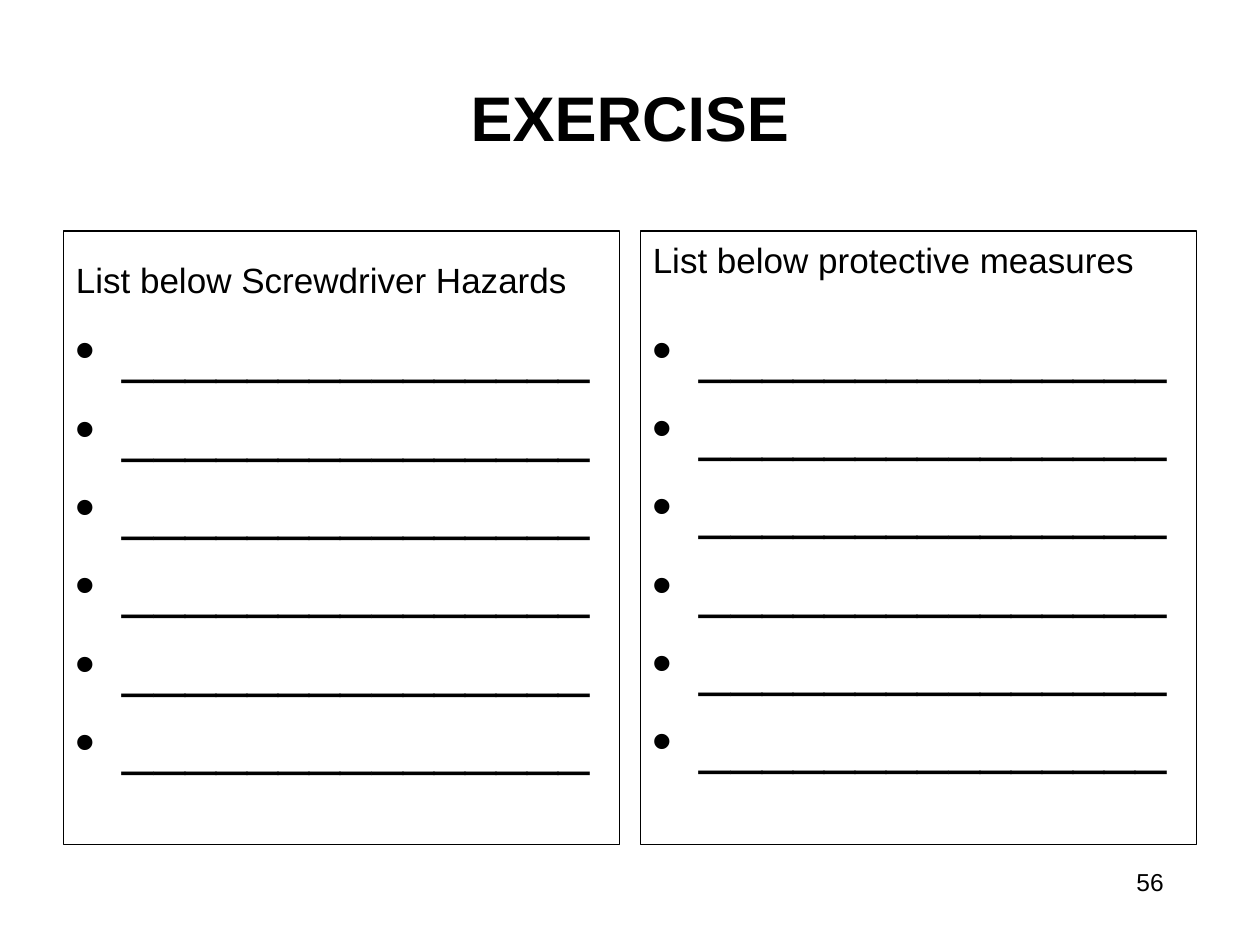
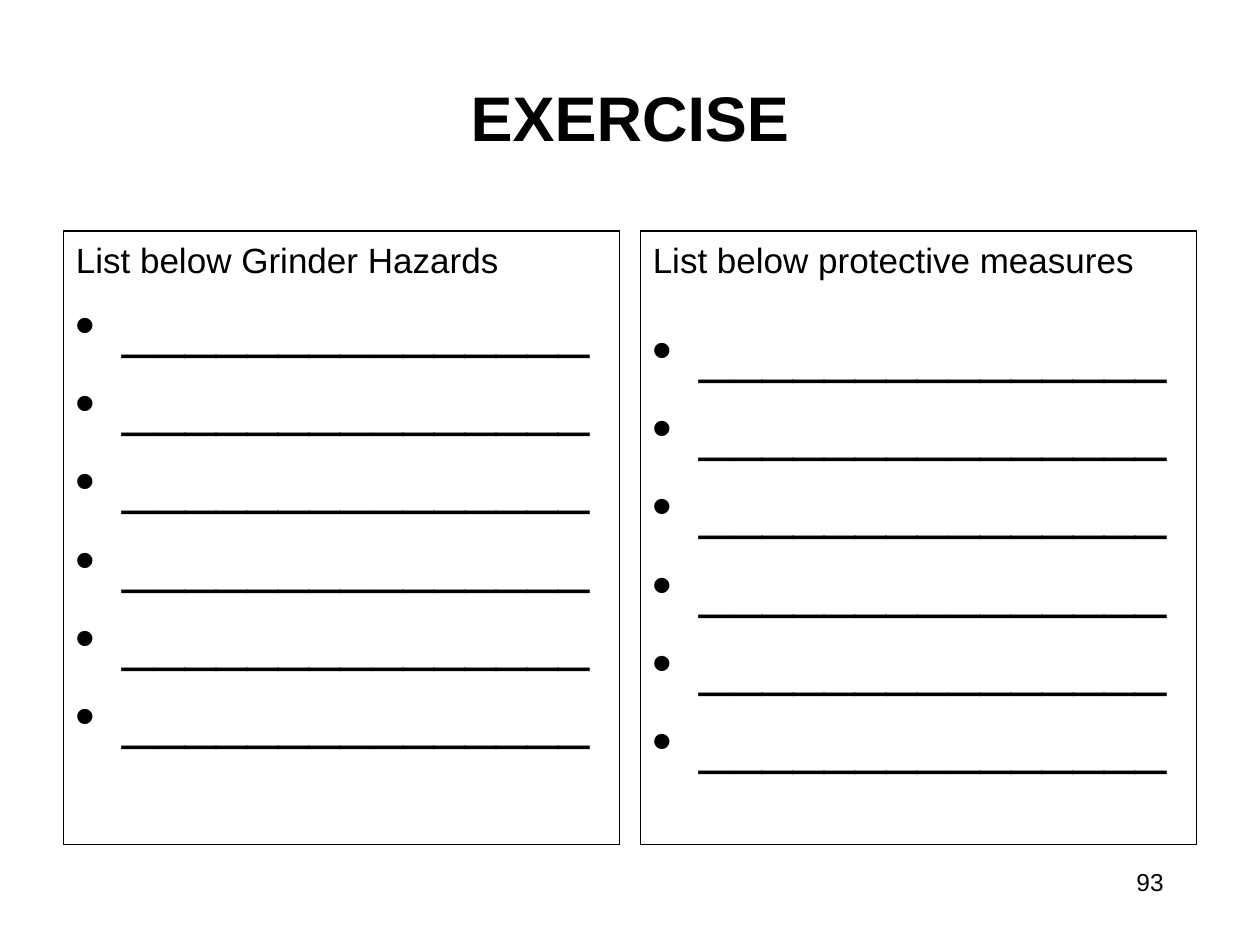
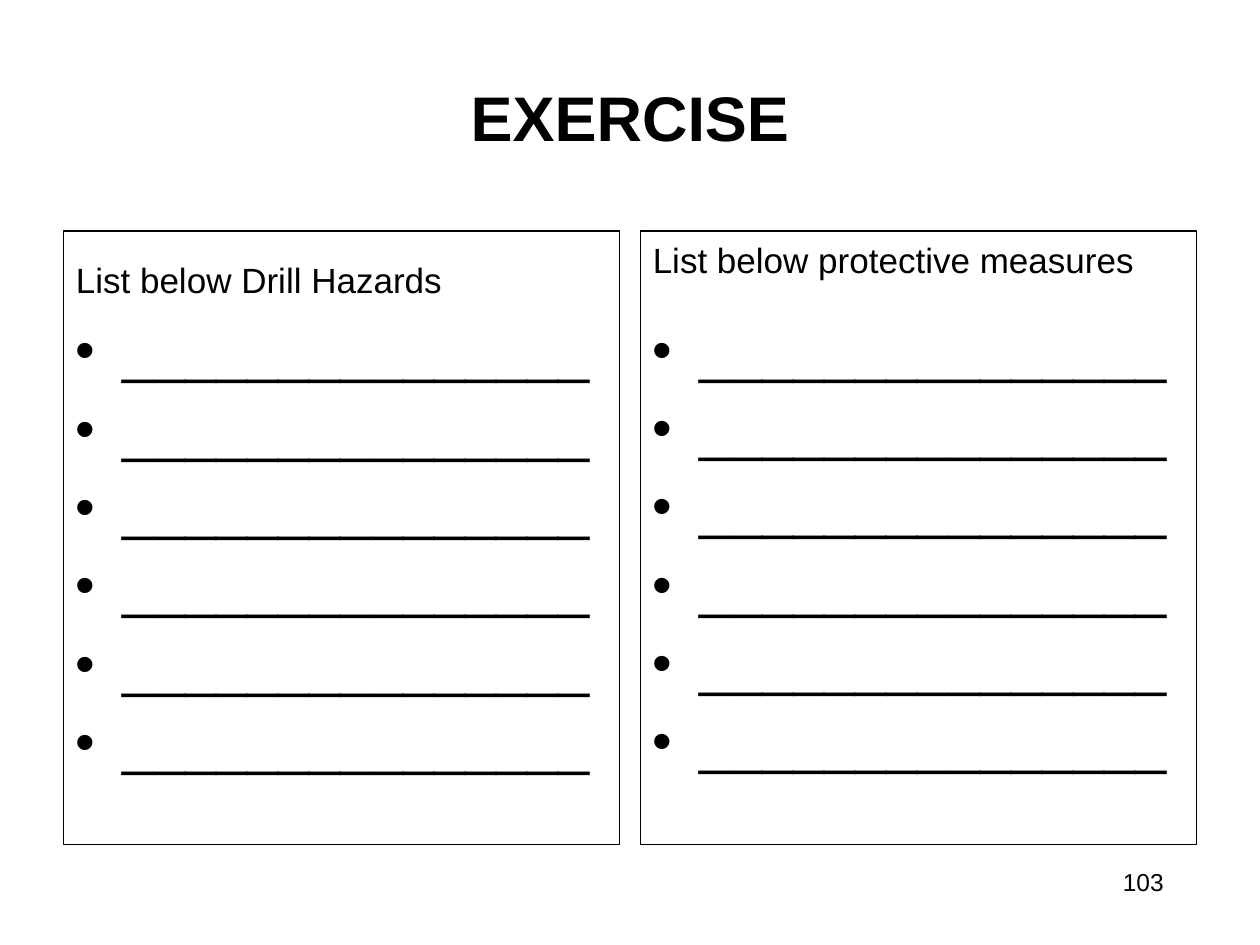
from dataclasses import dataclass

from lxml import etree
from pptx import Presentation
from pptx.dml.color import RGBColor
from pptx.enum.shapes import MSO_SHAPE
from pptx.enum.text import MSO_ANCHOR, PP_ALIGN
from pptx.oxml.ns import qn
from pptx.util import Cm, Pt

LEFT, CENTER, RIGHT = PP_ALIGN.LEFT, PP_ALIGN.CENTER, PP_ALIGN.RIGHT
TOP, MIDDLE = MSO_ANCHOR.TOP, MSO_ANCHOR.MIDDLE
RECTANGLE = MSO_SHAPE.RECTANGLE

TITLE = "EXERCISE"
MEASURES = "List below protective measures"
ANSWER_LINE = "_" * 15
ANSWER_COUNT = 6

# Heading styles: top inset of the card (cm), space before the first answer (pt)
LOWERED = (0.56, 9.1)
COMPACT = (0.14, 6.35)
SPACED = (0.14, 20.6)

# Page number, hazard heading, hazard heading style
EXERCISES = [
    ("56", "List below Screwdriver Hazards", LOWERED),
    ("93", "List below Grinder Hazards", COMPACT),
    ("103", "List below Drill Hazards", LOWERED),
]


@dataclass(frozen=True)
class Theme:
    font: str = "Arial"
    ink: RGBColor = RGBColor(0, 0, 0)
    title_size: float = 36
    heading_size: float = 20
    answer_size: float = 32
    page_size: float = 14
    answer_gap: float = 6.35
    border: float = 0.75


THEME = Theme()

SLIDE_WIDTH, SLIDE_HEIGHT = 25.4, 19.05
MARGIN = 1.28
CARD_TOP, CARD_HEIGHT, CARD_GAP = 4.66, 12.36, 0.42
CARD_WIDTH = (SLIDE_WIDTH - 2 * MARGIN - CARD_GAP) / 2
HANGING_INDENT = 0.95
TITLE_AREA = (MARGIN, 0.76, SLIDE_WIDTH - 2 * MARGIN, 3.18)
PAGE_AREA = (18.2, 17.35, 5.51, 1.32)


def style(para, size, align=LEFT, bold=False):
    para.alignment = align
    font = para.font
    font.name, font.size, font.bold = THEME.font, Pt(size), bold
    font.color.rgb = THEME.ink


def add_label(page, area, text, size, align, anchor=TOP, bold=False):
    frame = page.shapes.add_textbox(*map(Cm, area)).text_frame
    frame.word_wrap = True
    frame.vertical_anchor = anchor
    frame.text = text
    style(frame.paragraphs[0], size, align, bold)


def add_bullet(para):
    properties = para._p.get_or_add_pPr()
    properties.set("marL", str(Cm(HANGING_INDENT)))
    properties.set("indent", str(-Cm(HANGING_INDENT)))
    etree.SubElement(properties, qn("a:buFont"), typeface=THEME.font)
    etree.SubElement(properties, qn("a:buChar"), char="•")


def add_card(page, column, heading, heading_style):
    """Draw a bordered card with a heading and blank answer lines."""
    inset, first_gap = heading_style
    left = MARGIN + column * (CARD_WIDTH + CARD_GAP)
    card = page.shapes.add_shape(
        RECTANGLE, *map(Cm, (left, CARD_TOP, CARD_WIDTH, CARD_HEIGHT)))
    card.shadow.inherit = False
    card.fill.background()
    card.line.color.rgb = THEME.ink
    card.line.width = Pt(THEME.border)

    frame = card.text_frame
    frame.word_wrap = True
    frame.vertical_anchor = TOP
    frame.margin_top = Cm(inset)
    frame.text = heading
    style(frame.paragraphs[0], THEME.heading_size)
    for number in range(ANSWER_COUNT):
        para = frame.add_paragraph()
        para.text = ANSWER_LINE
        add_bullet(para)
        para.space_before = Pt(THEME.answer_gap if number else first_gap)
        style(para, THEME.answer_size)


def main():
    deck = Presentation()
    deck.slide_width, deck.slide_height = Cm(SLIDE_WIDTH), Cm(SLIDE_HEIGHT)
    blank = deck.slide_layouts[6]
    for page_number, hazards, hazard_style in EXERCISES:
        page = deck.slides.add_slide(blank)
        add_label(page, TITLE_AREA, TITLE, THEME.title_size, CENTER, MIDDLE, True)
        add_card(page, 0, hazards, hazard_style)
        add_card(page, 1, MEASURES, SPACED)
        add_label(page, PAGE_AREA, page_number, THEME.page_size, RIGHT)
    deck.save("out.pptx")


if __name__ == "__main__":
    main()
